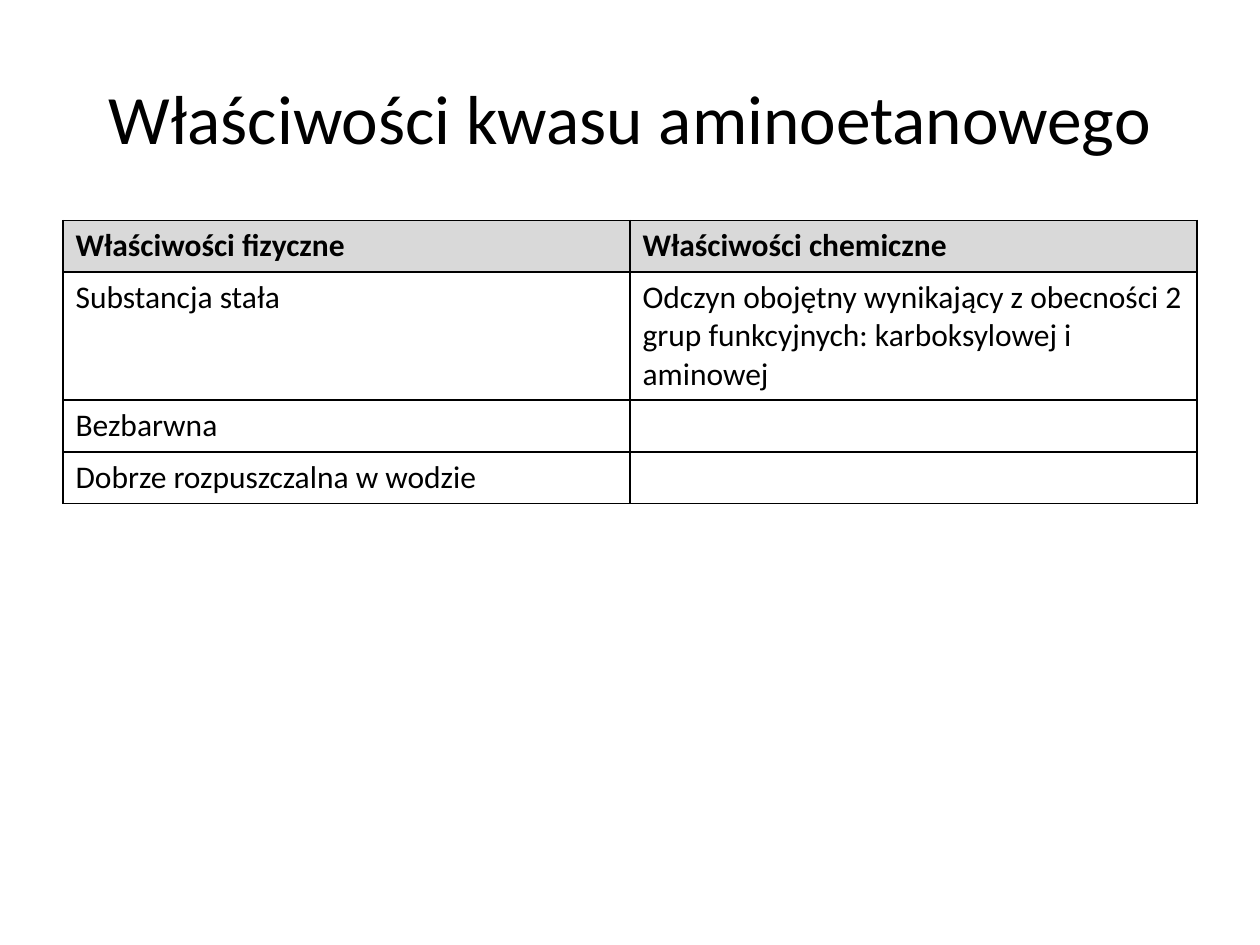
import pptx
import pptx.dml.color
import pptx.enum.text
import pptx.oxml
import pptx.oxml.ns
import pptx.util
from pptx.util import Inches

COLORS = {"text": "000000", "border": "000000", "header": "D9D9D9", "body": "FFFFFF"}
FONT = "Calibri"
ROWS = [
    ("Właściwości fizyczne", "Właściwości chemiczne"),
    ("Substancja stała",
     "Odczyn obojętny wynikający z obecności 2 grup funkcyjnych: karboksylowej i aminowej"),
    ("Bezbarwna", ""),
    ("Dobrze rozpuszczalna w wodzie", ""),
]


def rgb(name):
    """Return the named colour."""
    return pptx.dml.color.RGBColor.from_string(COLORS[name])


def write(tf, text, size=18, bold=False, align=pptx.enum.text.PP_ALIGN.LEFT):
    """Put formatted text in a text frame."""
    p = tf.paragraphs[0]
    p.alignment = align
    p.font.size = pptx.util.Pt(size)
    if text:
        r = p.add_run()
        r.text = text
        r.font.name = FONT
        r.font.size = pptx.util.Pt(size)
        r.font.bold = bold
        r.font.color.rgb = rgb("text")


def set_borders(cell, width=1):
    """Draw a solid line on the four sides of a cell."""
    pr = cell._tc.get_or_add_tcPr()
    for i, side in enumerate(("lnL", "lnR", "lnT", "lnB")):
        pr.insert(i, pptx.oxml.parse_xml(
            f'<a:{side} {pptx.oxml.ns.nsdecls("a")} w="{pptx.util.Pt(width)}">'
            f'<a:solidFill><a:srgbClr val="{COLORS["border"]}"/></a:solidFill></a:{side}>'))


def add_title(slide, text, left, top, width, height):
    """Place and format the slide title."""
    sp = slide.shapes.title
    sp.left, sp.top, sp.width, sp.height = left, top, width, height
    tf = sp.text_frame
    tf.word_wrap = True
    tf.vertical_anchor = pptx.enum.text.MSO_ANCHOR.MIDDLE
    write(tf, text, size=39.6, align=pptx.enum.text.PP_ALIGN.CENTER)


def add_properties_table(slide, rows, left, top, width, row_height):
    """Add the bordered table of properties with a shaded header."""
    columns = len(rows[0])
    table = slide.shapes.add_table(
        len(rows), columns, left, top, width, row_height * len(rows)).table
    table.horz_banding = False
    for i, row in enumerate(rows):
        for j, text in enumerate(row):
            cell = table.cell(i, j)
            cell.fill.solid()
            cell.fill.fore_color.rgb = rgb("body" if i else "header")
            set_borders(cell)
            write(cell.text_frame, text, bold=i == 0)


def main():
    """Build and save the slide."""
    prs = pptx.Presentation()
    prs.slide_width, prs.slide_height = Inches(10), Inches(7.5)
    slide = prs.slides.add_slide(prs.slide_layouts[5])
    left, width = Inches(0.5), Inches(9)
    add_title(slide, "Właściwości kwasu aminoetanowego", left, Inches(0.3), width, Inches(1.25))
    add_properties_table(slide, ROWS, left, Inches(1.75), width, Inches(0.41))
    prs.save("out.pptx")


if __name__ == "__main__":
    main()
